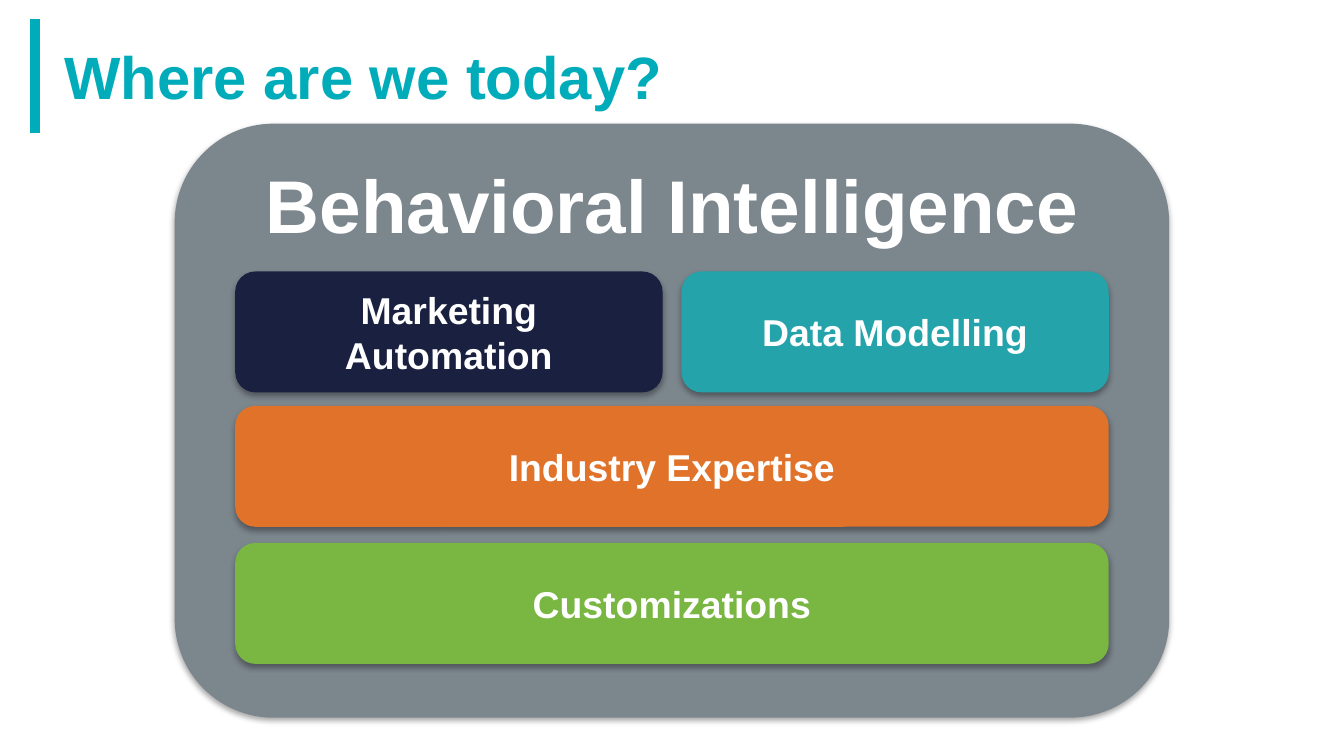
from lxml.etree import SubElement
from pptx import Presentation
from pptx.dml.color import RGBColor
from pptx.enum.shapes import MSO_CONNECTOR, MSO_SHAPE
from pptx.enum.text import MSO_ANCHOR, PP_ALIGN
from pptx.oxml.ns import qn
from pptx.util import Inches, Pt

# Content: each row holds blocks of equal width
TITLE = "Where are we today?"
PANEL = "Behavioral Intelligence"
ROWS = [
    (2.02, [("Marketing Automation", "navy"), ("Data Modelling", "teal")]),
    (3.02, [("Industry Expertise", "orange")]),
    (4.04, [("Customizations", "green")]),
]

THEME = {
    "font": "Arial",
    "sizes": {"title": 32, "panel": 40, "block": 20},
    "colors": {
        "accent": "00ACBA", "panel": "7C868D", "white": "FFFFFF",
        "navy": "1A203F", "teal": "24A3AB", "orange": "E0722A", "green": "79B642",
    },
}
ROW_LEFT, ROW_WIDTH, ROW_HEIGHT, GAP = 1.75, 6.5, 0.9, 0.14


def color(name):
    return RGBColor.from_string(THEME["colors"][name])


def write(frame, text, size, ink, align, anchor):
    frame.word_wrap = True
    frame.vertical_anchor = anchor
    para = frame.paragraphs[0]
    para.alignment = align
    span = para.add_run()
    span.text = text
    span.font.name = THEME["font"]
    span.font.size = Pt(THEME["sizes"][size])
    span.font.bold = True
    span.font.color.rgb = color(ink)


def add_shadow(shape):
    shape.shadow.inherit = False
    effects = shape._element.spPr.find(qn("a:effectLst"))
    shadow = SubElement(effects, qn("a:outerShdw"), blurRad=str(Pt(3.1)),
                        dist=str(Pt(1.8)), dir="5400000", rotWithShape="0")
    tint = SubElement(shadow, qn("a:srgbClr"), val="000000")
    SubElement(tint, qn("a:alpha"), val="35000")


def add_block(slide, bounds, fill, text, size, anchor):
    box = slide.shapes.add_shape(MSO_SHAPE.ROUNDED_RECTANGLE, *map(Inches, bounds))
    box.fill.solid()
    box.fill.fore_color.rgb = color(fill)
    box.line.fill.background()
    add_shadow(box)
    write(box.text_frame, text, size, "white", PP_ALIGN.CENTER, anchor)


# Widescreen deck, 16:9
deck = Presentation()
deck.slide_width, deck.slide_height = Inches(10), Inches(10 * 9 / 16)
slide = deck.slides.add_slide(deck.slide_layouts[5])

# Title with its accent bar
bar = slide.shapes.add_connector(
    MSO_CONNECTOR.STRAIGHT, Inches(0.26), Inches(0.14), Inches(0.26), Inches(0.99))
bar.line.color.rgb = color("accent")
bar.line.width = Pt(5)
SubElement(bar._element.spPr, qn("a:effectLst"))

title = slide.shapes.title
title.left, title.top = Inches(0.38), Inches(0.14)
title.width, title.height = Inches(9), Inches(0.84)
write(title.text_frame, TITLE, "title", "accent", PP_ALIGN.LEFT, MSO_ANCHOR.MIDDLE)

# Panel behind the blocks
add_block(slide, (1.3, 0.92, 7.4, 4.42), "panel", PANEL, "panel", MSO_ANCHOR.TOP)

# Rows of blocks
for top, blocks in ROWS:
    width = (ROW_WIDTH - GAP * (len(blocks) - 1)) / len(blocks)
    for column, (text, fill) in enumerate(blocks):
        left = ROW_LEFT + column * (width + GAP)
        add_block(slide, (left, top, width, ROW_HEIGHT), fill, text, "block",
                  MSO_ANCHOR.MIDDLE)

deck.save("out.pptx")
